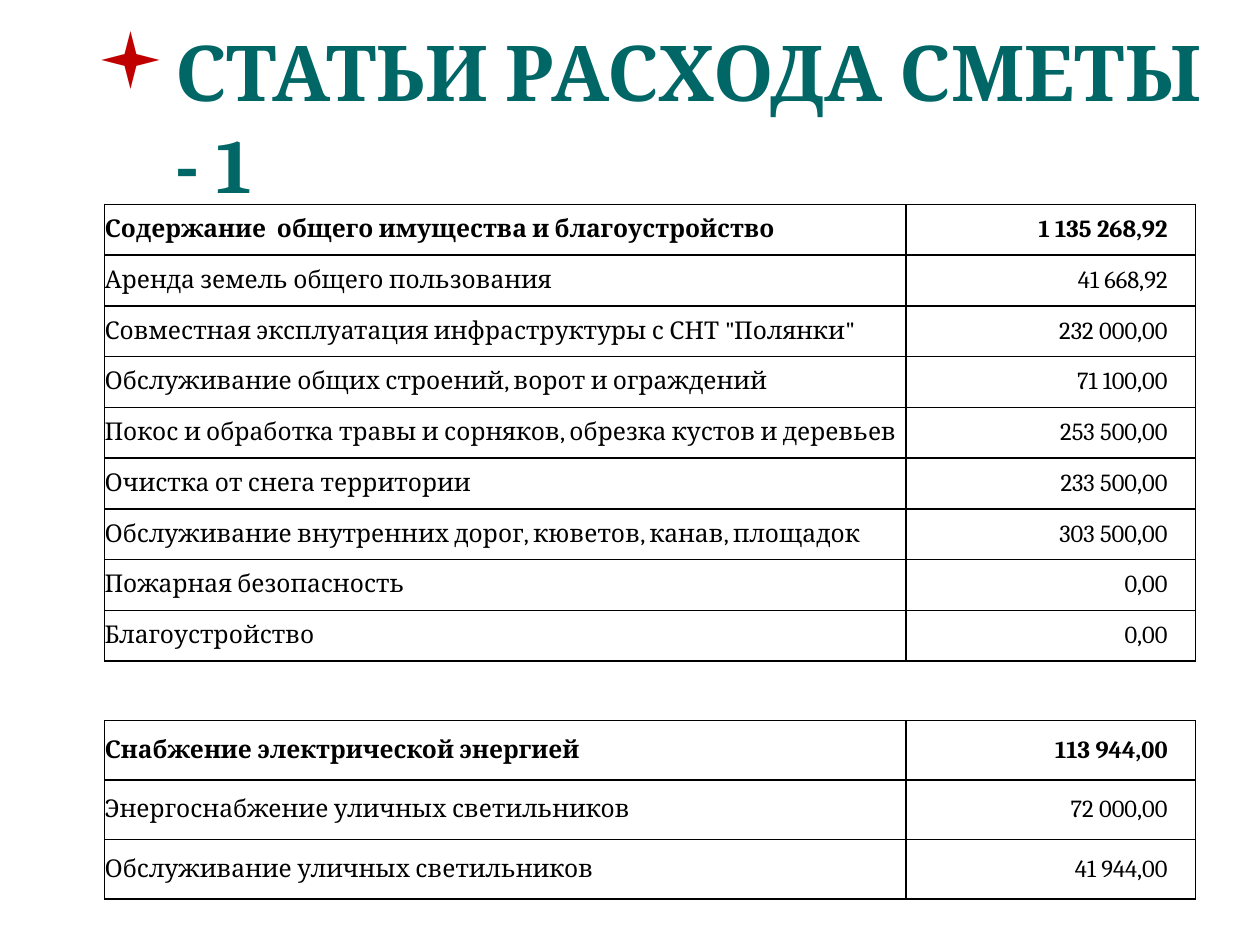
"""Build the slide with the expense items of the budget."""
from lxml import etree
from pptx import Presentation
from pptx.dml.color import RGBColor
from pptx.enum.text import MSO_ANCHOR, PP_ALIGN
from pptx.oxml import parse_xml
from pptx.oxml.ns import nsdecls, qn
from pptx.util import Pt

MIDDLE = MSO_ANCHOR.MIDDLE
LEFT, RIGHT = PP_ALIGN.LEFT, PP_ALIGN.RIGHT
FONT = "Cambria"
COLORS = {"title": "006666", "bullet": "C00000", "ink": "000000"}

UPKEEP = [
    ("Содержание  общего имущества и благоустройство", "1 135 268,92"),
    ("Аренда земель общего пользования", "41 668,92"),
    ('Совместная эксплуатация инфраструктуры с СНТ "Полянки"', "232 000,00"),
    ("Обслуживание общих строений, ворот и ограждений", "71 100,00"),
    ("Покос и обработка травы и сорняков, обрезка кустов и деревьев", "253 500,00"),
    ("Очистка от снега территории", "233 500,00"),
    ("Обслуживание внутренних дорог, кюветов, канав, площадок", "303 500,00"),
    ("Пожарная безопасность", "0,00"),
    ("Благоустройство", "0,00"),
]
POWER = [
    ("Снабжение электрической энергией", "113 944,00"),
    ("Энергоснабжение уличных светильников", "72 000,00"),
    ("Обслуживание уличных светильников", "41 944,00"),
]


def style(par, size, color, bold):
    font = par.runs[0].font
    font.name, font.size, font.bold = FONT, Pt(size), bold
    font.color.rgb = RGBColor.from_string(COLORS[color])


def border(cell):
    props = cell._tc.get_or_add_tcPr()
    for i, side in enumerate(("lnL", "lnR", "lnT", "lnB")):
        props.insert(i, parse_xml(
            f'<a:{side} {nsdecls("a")} w="{Pt(1)}"><a:solidFill>'
            f'<a:srgbClr val="{COLORS["ink"]}"/></a:solidFill></a:{side}>'))


deck = Presentation()
deck.slide_width, deck.slide_height = Pt(720), Pt(540)
slide = deck.slides.add_slide(deck.slide_layouts[6])

title = slide.shapes.add_textbox(Pt(48.24), Pt(21.6), Pt(657.36), Pt(90))
frame = title.text_frame
frame.word_wrap = True
frame.vertical_anchor = MIDDLE
frame.text = "СТАТЬИ РАСХОДА СМЕТЫ - 1"
head = frame.paragraphs[0]
style(head, 44, "title", True)
props = head._p.get_or_add_pPr()
props.set("marL", str(Pt(45)))
props.set("indent", str(Pt(-45)))
tint = etree.SubElement(props, qn("a:buClr"))
etree.SubElement(tint, qn("a:srgbClr"), val=COLORS["bullet"])
etree.SubElement(props, qn("a:buFont"), typeface="Wingdings")
etree.SubElement(props, qn("a:buChar"), char="▪")

widths = (458, 165.5)
for items, top, height in ((UPKEEP, 116.75, 29), (POWER, 411.75, 34)):
    shape = slide.shapes.add_table(
        len(items), 2, Pt(59.75), Pt(top), Pt(sum(widths)), Pt(height * len(items)))
    table = shape.table
    table.first_row = table.horz_banding = False
    for col, width in zip(table.columns, widths):
        col.width = Pt(width)
    for r, item in enumerate(items):
        table.rows[r].height = Pt(height)
        for c, text in enumerate(item):
            cell = table.cell(r, c)
            cell.margin_left = cell.margin_top = cell.margin_bottom = 0
            cell.margin_right = Pt(16 * c)
            cell.vertical_anchor = MIDDLE
            cell.fill.background()
            border(cell)
            cell.text_frame.text = text
            par = cell.text_frame.paragraphs[0]
            par.alignment = RIGHT if c else LEFT
            style(par, 14, "ink", r == 0)

deck.save("out.pptx")
